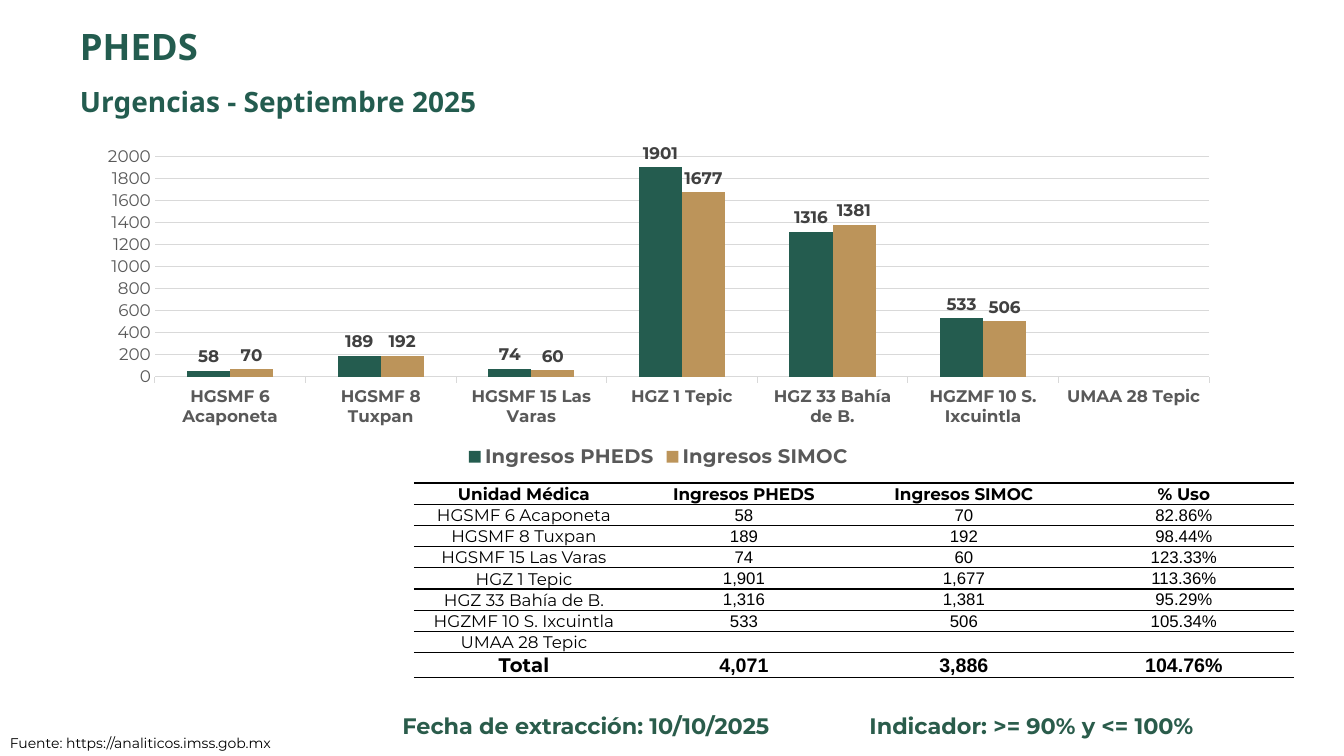
from pptx import Presentation
from pptx.chart.data import CategoryChartData
from pptx.dml.color import RGBColor
from pptx.enum.chart import XL_CHART_TYPE as ChartType, XL_LABEL_POSITION as LabelPos
from pptx.enum.chart import XL_LEGEND_POSITION as LegendPos, XL_TICK_MARK as Tick
from pptx.enum.text import MSO_ANCHOR as Anchor, MSO_AUTO_SIZE as AutoSize, PP_ALIGN as Align
from pptx.oxml import parse_xml
from pptx.oxml.ns import nsdecls
from pptx.util import Emu, Pt

BLACK = RGBColor(0x00, 0x00, 0x00)
TITLE_GREEN = RGBColor(0x23, 0x5C, 0x4F)
NOTE_GREEN = RGBColor(0x2A, 0x5C, 0x4B)
BAR_GREEN = RGBColor(0x24, 0x5C, 0x4F)
BAR_GOLD = RGBColor(0xBC, 0x94, 0x5A)
GRID_GRAY = RGBColor(0xD9, 0xD9, 0xD9)
AXIS_GRAY = RGBColor(0x59, 0x59, 0x59)
LABEL_GRAY = RGBColor(0x40, 0x40, 0x40)
HEADING_FONT, BODY_FONT, NUMBER_FONT = "Noto Sans", "Montserrat", "Arial"

PHEDS, SIMOC = "Ingresos PHEDS", "Ingresos SIMOC"
UNITS = [
    ("HGSMF 6 Acaponeta", 58, 70, "82.86%"),
    ("HGSMF 8 Tuxpan", 189, 192, "98.44%"),
    ("HGSMF 15 Las Varas", 74, 60, "123.33%"),
    ("HGZ 1 Tepic", 1901, 1677, "113.36%"),
    ("HGZ 33 Bahía de B.", 1316, 1381, "95.29%"),
    ("HGZMF 10 S. Ixcuintla", 533, 506, "105.34%"),
    ("UMAA 28 Tepic", None, None, ""),
]
TOTAL = ("Total", 4071, 3886, "104.76%")


def px(n):
    return Emu(round(n * 914400 / 100.8))


def style_font(font, size, color, bold=False, name=BODY_FONT):
    font.size, font.bold, font.name = Pt(size), bold, name
    font.color.rgb = color


def add_text(s, text, box, size, color, bold=True, name=BODY_FONT,
             align=Align.LEFT, spacing=None, wrap=True, grow=False):
    tf = s.shapes.add_textbox(*map(px, box)).text_frame
    tf.word_wrap = wrap
    tf.auto_size = AutoSize.SHAPE_TO_FIT_TEXT if grow else AutoSize.NONE
    p = tf.paragraphs[0]
    p.alignment, p.line_spacing = align, spacing
    r = p.add_run()
    r.text = text
    style_font(r.font, size, color, bold, name)


def style_axis(axis, bold):
    axis.major_tick_mark, axis.minor_tick_mark = Tick.OUTSIDE, Tick.NONE
    style_font(axis.tick_labels.font, 12, AXIS_GRAY, bold)


def set_line(line, color, width):
    line.color.rgb, line.width = color, Pt(width)


def add_column_chart(s, box):
    data = CategoryChartData()
    data.categories = [unit[0] for unit in UNITS]
    data.add_series(PHEDS, [unit[1] for unit in UNITS])
    data.add_series(SIMOC, [unit[2] for unit in UNITS])
    chart = s.shapes.add_chart(ChartType.COLUMN_CLUSTERED, *map(px, box), data).chart
    chart.has_title = False
    style_font(chart.font, 10, BLACK)
    chart.has_legend = True
    chart.legend.position = LegendPos.BOTTOM
    chart.legend.include_in_layout = False
    style_font(chart.legend.font, 14, AXIS_GRAY, True)

    cats, vals = chart.category_axis, chart.value_axis
    style_axis(cats, True)
    set_line(cats.format.line, GRID_GRAY, 0.75)
    style_axis(vals, False)
    vals.major_tick_mark = Tick.NONE
    vals.format.line.fill.background()
    vals.minimum_scale, vals.maximum_scale, vals.major_unit = 0, 2000, 200
    set_line(vals.major_gridlines.format.line, GRID_GRAY, 0.75)

    plot = chart.plots[0]
    plot.gap_width, plot.overlap, plot.vary_by_categories = 150, 0, False
    for series, color in zip(plot.series, (BAR_GREEN, BAR_GOLD)):
        series.format.fill.solid()
        series.format.fill.fore_color.rgb = color
        labels = series.data_labels
        labels.show_value = True
        labels.position = LabelPos.OUTSIDE_END
        style_font(labels.font, 12, LABEL_GRAY, True)


def rule_cell(cell):
    tcPr = cell._tc.get_or_add_tcPr()
    for side in ("lnL", "lnR"):
        tcPr.append(parse_xml(f'<a:{side} {nsdecls("a")} w="0"><a:noFill/></a:{side}>'))
    for side in ("lnT", "lnB"):
        tcPr.append(parse_xml(
            f'<a:{side} {nsdecls("a")} w="12700"><a:solidFill>'
            f'<a:srgbClr val="{BLACK}"/></a:solidFill></a:{side}>'))
    cell.fill.background()


def fill_cell(cell, text, size, bold, name, anchor):
    cell.margin_left = cell.margin_right = cell.margin_top = px(1)
    cell.margin_bottom = 0
    cell.vertical_anchor = anchor
    rule_cell(cell)
    p = cell.text_frame.paragraphs[0]
    p.alignment = Align.CENTER
    if text:
        r = p.add_run()
        r.text = text
        style_font(r.font, size, BLACK, bold, name)
    else:
        p.font.size = Pt(size)


def add_unit_table(s, box, row_height, total_height):
    rows = [("Unidad Médica", PHEDS, SIMOC, "% Uso"), *UNITS, TOTAL]
    last = len(rows) - 1
    table = s.shapes.add_table(len(rows), 4, *map(px, box)).table
    table.first_row = table.horz_banding = False
    for i, values in enumerate(rows):
        strong = i in (0, last)
        table.rows[i].height = px(total_height if i == last else row_height)
        for j, value in enumerate(values):
            text = f"{value:,}" if isinstance(value, int) else value
            fill_cell(table.cell(i, j), text,
                      size=14 if i == last else 12,
                      bold=strong,
                      name=BODY_FONT if i == 0 or j == 0 else NUMBER_FONT,
                      anchor=Anchor.TOP if j == 0 and not strong else Anchor.MIDDLE)


def main():
    prs = Presentation()
    prs.slide_width, prs.slide_height = px(1344), px(756)
    s = prs.slides.add_slide(prs.slide_layouts[6])
    add_text(s, "Urgencias - Septiembre 2025", (70, 83, 956, 49), 20, TITLE_GREEN,
             name=HEADING_FONT, spacing=0.9)
    add_text(s, "PHEDS", (70, 24, 956, 49), 26, TITLE_GREEN,
             name=HEADING_FONT, spacing=0.9)
    add_text(s, "Fuente: https://analiticos.imss.gob.mx", (0, 730, 294, 27), 10, BLACK,
             bold=False, wrap=False, grow=True)
    add_unit_table(s, (414, 483, 880, 194), 21, 24)
    add_column_chart(s, (85, 140, 1147, 333))
    add_text(s, "Fecha de extracción: 10/10/2025", (332, 707, 508, 37), 16, NOTE_GREEN,
             align=Align.CENTER, grow=True)
    add_text(s, "Indicador: >= 90% y <= 100%", (740, 707, 583, 37), 16, NOTE_GREEN,
             align=Align.CENTER, grow=True)
    prs.save("out.pptx")


if __name__ == "__main__":
    main()
